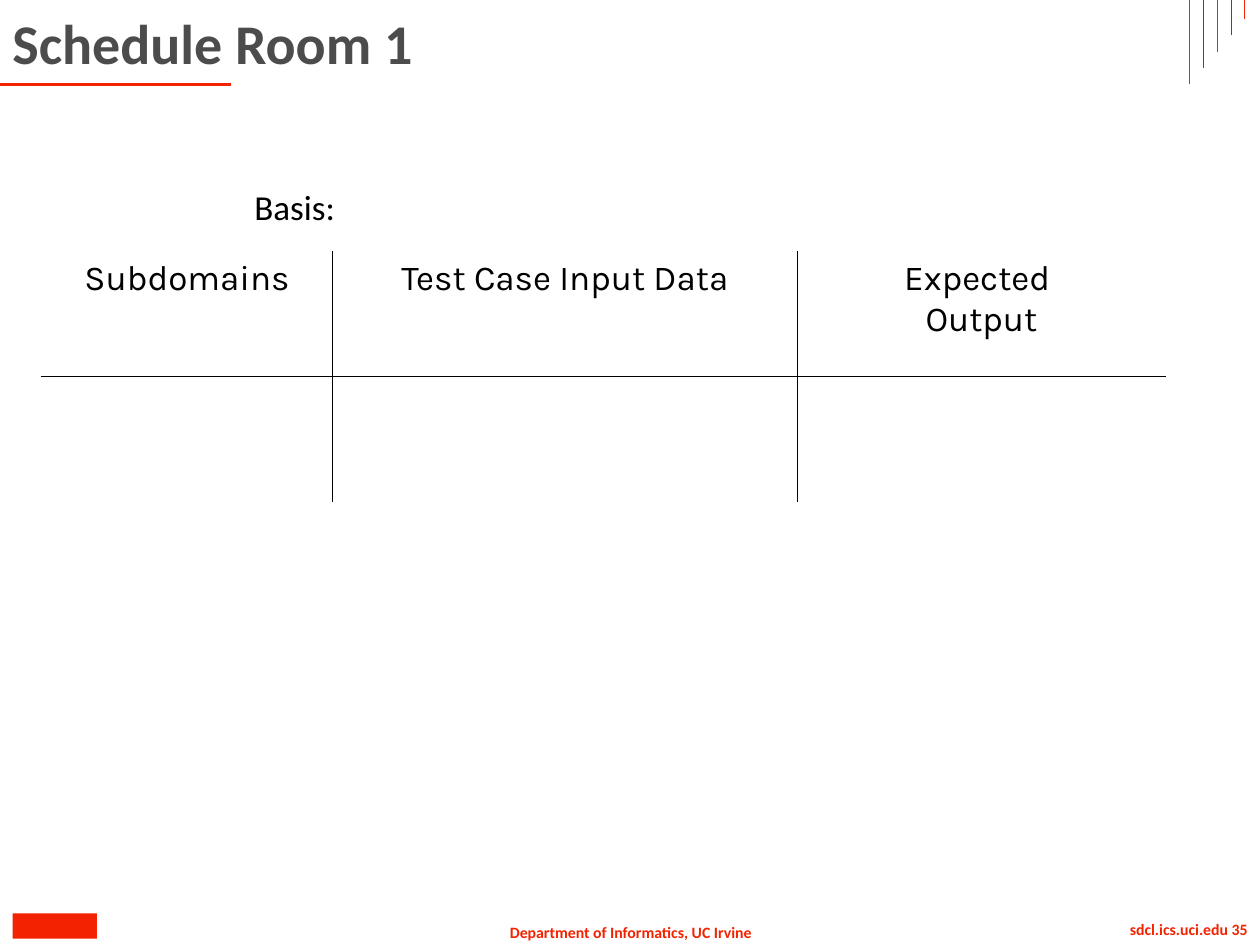
from lxml.etree import SubElement
from pptx import Presentation
from pptx.dml.color import RGBColor
from pptx.enum.shapes import MSO_CONNECTOR, MSO_SHAPE
from pptx.enum.text import MSO_ANCHOR, PP_ALIGN
from pptx.oxml.ns import qn
from pptx.util import Inches, Pt

COLORS = {"red": "F32200", "gray": "4C4C4C", "black": "000000"}


class SlideBuilder:
    body_font = "Calibri"
    table_font = "Karla"

    def __init__(self, slide):
        self.slide = slide

    def format(self, p, size, color, bold=False, font=None, align=PP_ALIGN.LEFT):
        p.alignment = align
        for r in p.runs:
            r.font.name = font or self.body_font
            r.font.size = Pt(size)
            r.font.bold = bold
            r.font.color.rgb = RGBColor.from_string(COLORS[color])

    def text(self, text, box, size, color, bold=True, align=PP_ALIGN.LEFT,
             wrap=False, anchor=MSO_ANCHOR.TOP):
        sp = self.slide.shapes.add_textbox(*map(Inches, box))
        tf = sp.text_frame
        tf.word_wrap = wrap
        tf.vertical_anchor = anchor
        tf.text = text
        self.format(tf.paragraphs[0], size, color, bold, align=align)

    def block(self, box, color):
        sp = self.slide.shapes.add_shape(MSO_SHAPE.RECTANGLE, *map(Inches, box))
        sp.shadow.inherit = False
        sp.fill.solid()
        sp.fill.fore_color.rgb = RGBColor.from_string(COLORS[color])
        sp.line.fill.background()

    def line(self, x1, y1, x2, y2, color, width):
        ln = self.slide.shapes.add_connector(
            MSO_CONNECTOR.STRAIGHT, *map(Inches, (x1, y1, x2, y2)))
        ln.line.color.rgb = RGBColor.from_string(COLORS[color])
        ln.line.width = Pt(width)
        SubElement(ln._element.spPr, qn("a:effectLst"))

    def border(self, cell, side):
        ln = SubElement(cell._tc.get_or_add_tcPr(), qn(f"a:ln{side}"), w=str(Pt(1)))
        fill = SubElement(ln, qn("a:solidFill"))
        SubElement(fill, qn("a:srgbClr"), val=COLORS["black"])

    def table(self, rows, left, top, widths, heights):
        """Table with inner rules only."""
        n_rows, n_cols = len(heights), len(widths)
        frame = self.slide.shapes.add_table(
            n_rows, n_cols, Inches(left), Inches(top),
            Inches(sum(widths)), Inches(sum(heights)))
        table = frame.table
        table.first_row = table.horz_banding = False
        for column, width in zip(table.columns, widths):
            column.width = Inches(width)
        for row, height in zip(table.rows, heights):
            row.height = Inches(height)
        for i, row in enumerate(rows):
            for j, text in enumerate(row):
                cell = table.cell(i, j)
                inner = {"L": j > 0, "R": j < n_cols - 1,
                         "T": i > 0, "B": i < n_rows - 1}
                for side, shown in inner.items():
                    if shown:
                        self.border(cell, side)
                cell.fill.background()
                if text:
                    p = cell.text_frame.paragraphs[0]
                    p.text = text
                    self.format(p, 20, "black", font=self.table_font,
                                align=PP_ALIGN.CENTER)


def main():
    prs = Presentation()
    prs.slide_width, prs.slide_height = Inches(10), Inches(7.5)
    s = SlideBuilder(prs.slides.add_slide(prs.slide_layouts[6]))

    # Footer
    s.block((0.1, 7.25, 0.67, 0.2), "red")
    s.text("Department of Informatics, UC Irvine", (3.93, 7.27, 2.15, 0.25),
           9, "red", align=PP_ALIGN.CENTER)
    s.text("sdcl.ics.uci.edu 35", (7.84, 7.25, 2.16, 0.25), 9, "red",
           align=PP_ALIGN.RIGHT, wrap=True)

    # Title rule and corner lines
    s.line(0, 0.67, 1.83, 0.67, "red", 1.5)
    for i in range(5):
        x = 9.44 + 0.11 * i
        s.line(x, 0.67 - 0.13 * i, x, 0, "gray" if i % 2 else "red", 0.5)

    # Title
    s.text("Schedule Room 1", (0, 0, 9, 0.67), 32, "gray", wrap=True,
           anchor=MSO_ANCHOR.MIDDLE)

    # Test case table
    s.table([["Subdomains", "Test Case Input Data", "Expected \vOutput"],
             ["", "", ""]],
            0.33, 2, [2.31, 3.69, 2.92], [0.99, 1])
    s.text("Basis:", (1.92, 1.42, 0.85, 0.44), 20, "black", bold=False)

    prs.save("out.pptx")


if __name__ == "__main__":
    main()
